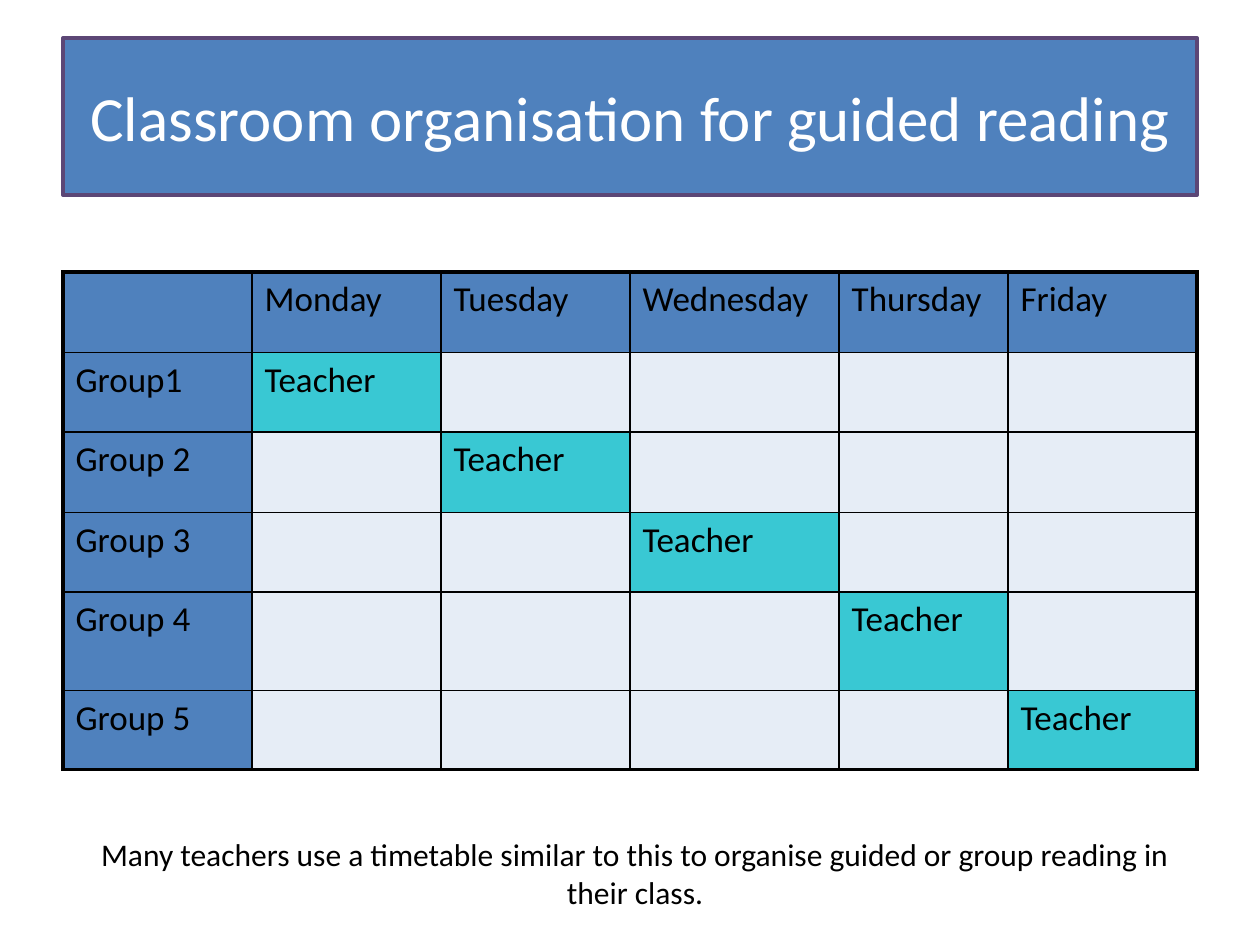
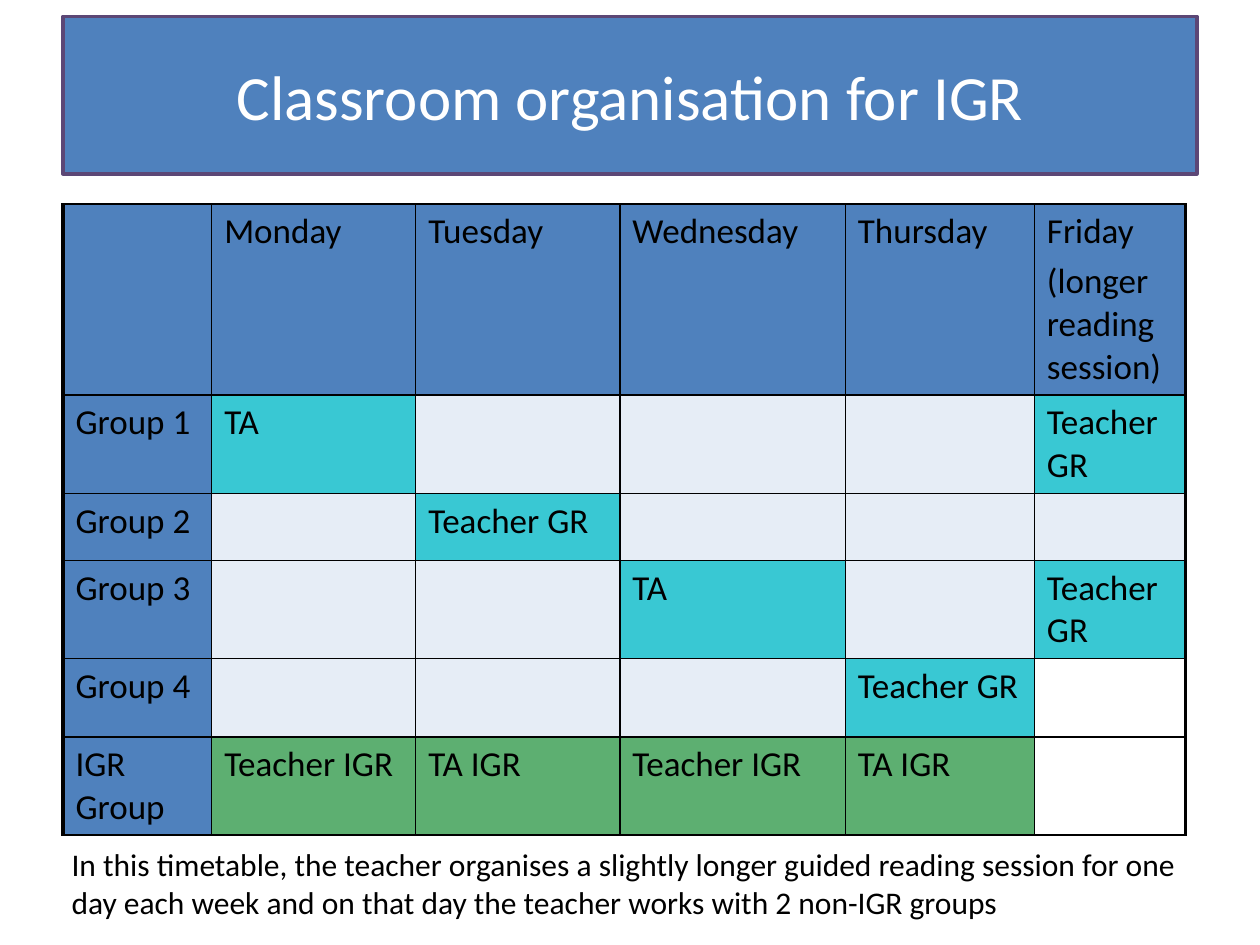
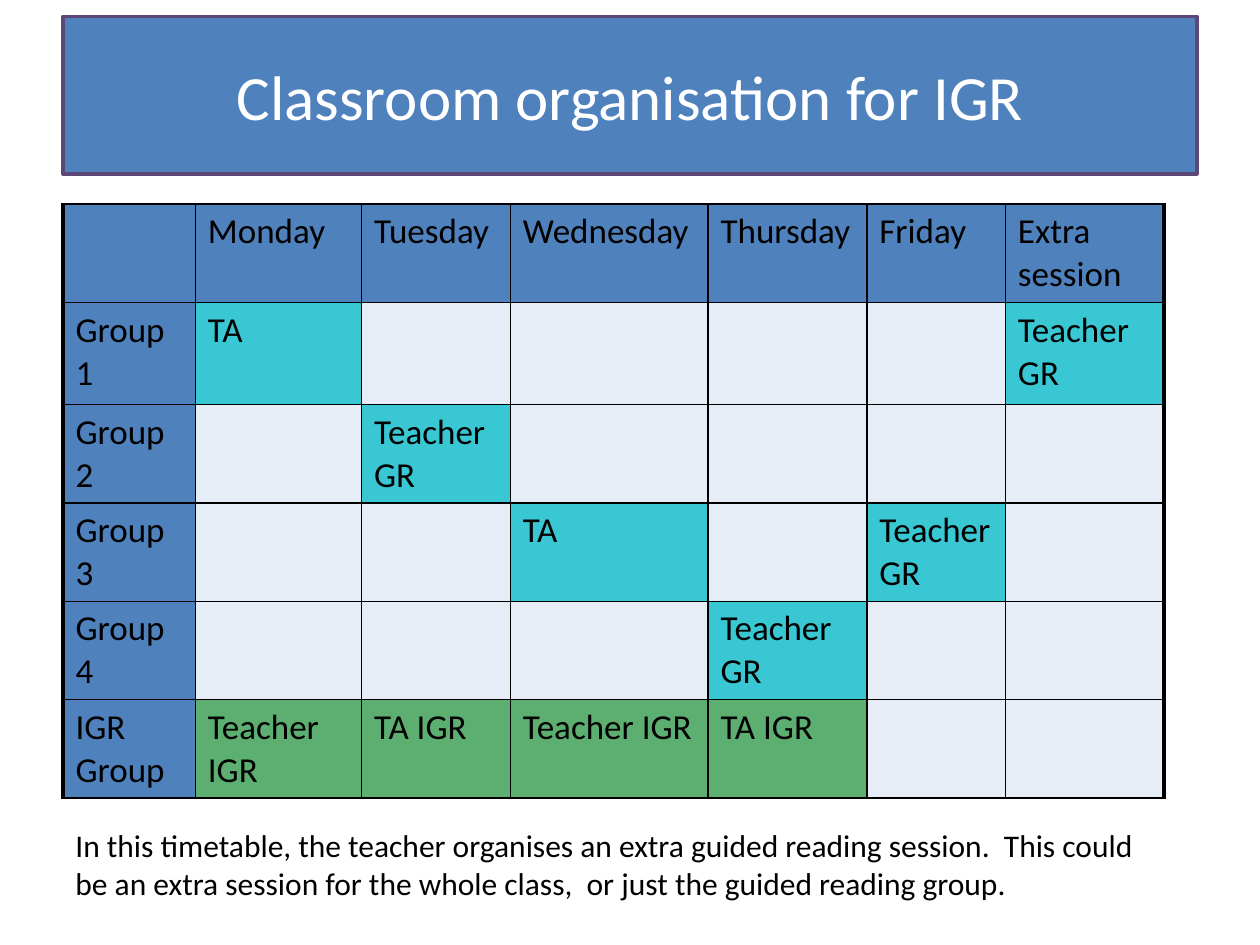
from lxml import etree
from pptx import Presentation
from pptx.dml.color import RGBColor
from pptx.enum import text as t
from pptx.oxml import ns
from pptx.util import Inches, Pt

HUES = {
    "head": "4F81BD", "edge": "5C4776", "plain": "E6EDF6", "guide": "39C8D3",
    "igr": "5DAF71", "white": "FFFFFF", "black": "000000",
}
FONT = "Calibri"
LEFT = 0.5
TALL = 0.77
IGR = ("IGR Group", {"Monday": "Teacher IGR", "Tuesday": "TA IGR",
                     "Wednesday": "Teacher IGR", "Thursday": "TA IGR"})

PLANS = [
    {
        "title": "Classroom organisation for guided reading", "top": 0.3,
        "days": [("Monday", 1.5), ("Tuesday", 1.5), ("Wednesday", 1.66),
                 ("Thursday", 1.34), ("Friday", 1.5)],
        "first": 1.5, "start": 2.16, "thick": "LRTB", "clear": [],
        "rows": [0.64, 0.63, 0.64, 0.63, 0.78, 0.63],
        "groups": [("Group1", {"Monday": "Teacher"}),
                   ("Group 2", {"Tuesday": "Teacher"}),
                   ("Group 3", {"Wednesday": "Teacher"}),
                   ("Group 4", {"Thursday": "Teacher"}),
                   ("Group 5", {"Friday": "Teacher"})],
        "note": "Many teachers use a timetable similar to this to organise "
                "guided or group reading in their class.",
        "box": (0.59, 6.58, 8.9, 0.71), "align": t.PP_ALIGN.CENTER,
    },
    {
        "title": "Classroom organisation for IGR", "top": 0.13,
        "days": [("Monday", 1.62), ("Tuesday", 1.62), ("Wednesday", 1.79),
                 ("Thursday", 1.5), ("Friday\n(longer reading session)", 1.2)],
        "first": 1.18, "start": 1.62, "thick": "LR",
        "clear": [("Group 4", "Friday"), ("IGR Group", "Friday")],
        "rows": [1.49, TALL, 0.53, TALL, 0.62, TALL],
        "groups": [("Group 1", {"Monday": "TA", "Friday": "Teacher GR"}),
                   ("Group 2", {"Tuesday": "Teacher GR"}),
                   ("Group 3", {"Wednesday": "TA", "Friday": "Teacher GR"}),
                   ("Group 4", {"Thursday": "Teacher GR"}),
                   IGR],
        "note": "In this timetable, the teacher organises a slightly longer guided "
                "reading session for one day each week and on that day the teacher "
                "works with 2 non-IGR groups",
        "box": (0.47, 6.66, 9, 0.71), "align": t.PP_ALIGN.LEFT,
    },
    {
        "title": "Classroom organisation for IGR", "top": 0.13,
        "days": [("Monday", 1.32), ("Tuesday", 1.18), ("Wednesday", 1.57),
                 ("Thursday", 1.26), ("Friday", 1.1), ("Extra session", 1.26)],
        "first": 1.05, "start": 1.62, "thick": "LR", "clear": [],
        "rows": [TALL, 0.81, TALL, TALL, TALL, TALL],
        "groups": [("Group 1", {"Monday": "TA", "Extra session": "Teacher GR"}),
                   ("Group 2", {"Tuesday": "Teacher GR"}),
                   ("Group 3", {"Wednesday": "TA", "Friday": "Teacher GR"}),
                   ("Group 4", {"Thursday": "Teacher GR"}),
                   IGR],
        "note": "In this timetable, the teacher organises an extra guided reading "
                "session.  This could be an extra session for the whole class,  "
                "or just the guided reading group.",
        "box": (0.5, 6.51, 8.75, 0.71), "align": t.PP_ALIGN.LEFT,
    },
]


def paint(fill, hue):
    fill.solid()
    fill.fore_color.rgb = RGBColor.from_string(HUES[hue])


def style(frame, size, hue, align=t.PP_ALIGN.LEFT, gap=0):
    for para in frame.paragraphs:
        para.alignment = align
        para.space_before = Pt(gap)
        para.font.size = Pt(size)
        for run in para.runs:
            run.font.size = Pt(size)
            run.font.name = FONT
            run.font.color.rgb = RGBColor.from_string(HUES[hue])


def add_title(slide, plan):
    band = slide.shapes.title
    band.left, band.top = Inches(LEFT), Inches(plan["top"])
    band.width, band.height = Inches(9), Inches(1.25)
    paint(band.fill, "head")
    paint(band.line.fill, "edge")
    band.line.width = Pt(2)
    frame = band.text_frame
    frame.text = plan["title"]
    frame.auto_size = t.MSO_AUTO_SIZE.NONE
    frame.vertical_anchor = t.MSO_ANCHOR.MIDDLE
    style(frame, 36, "white", t.PP_ALIGN.CENTER)


def add_edges(cell, outer):
    props = cell._tc.get_or_add_tcPr()
    for side in "LRTB":
        width = Pt(2.25 if side in outer else 1)
        line = etree.SubElement(props, ns.qn("a:ln" + side), w=str(width))
        fill = etree.SubElement(line, ns.qn("a:solidFill"))
        etree.SubElement(fill, ns.qn("a:srgbClr"), val=HUES["black"])


def pick_hue(plan, row, col, group, day, words):
    if row == 0 or col == 0:
        return "head"
    if words:
        return "igr" if words.endswith("IGR") else "guide"
    return "white" if (group, day) in plan["clear"] else "plain"


def add_plan(slide, plan):
    heads = [""] + [name for name, _ in plan["days"]]
    days = [name.split("\n")[0] for name in heads]
    wide = [plan["first"]] + [width for _, width in plan["days"]]
    grid = [heads] + [[group] + [duty.get(day, "") for day in days[1:]]
                      for group, duty in plan["groups"]]
    high = plan["rows"]
    table = slide.shapes.add_table(
        len(grid), len(heads), Inches(LEFT), Inches(plan["start"]),
        Inches(sum(wide)), Inches(sum(high))).table
    table.first_row = table.horz_banding = False
    for col, width in enumerate(wide):
        table.columns[col].width = Inches(width)
    for row, line in enumerate(grid):
        table.rows[row].height = Inches(high[row])
        for col, words in enumerate(line):
            cell = table.cell(row, col)
            cell.text = words
            style(cell.text_frame, 20, "black", gap=4)
            rim = {"L": col == 0, "R": col == len(heads) - 1,
                   "T": row == 0, "B": row == len(grid) - 1}
            add_edges(cell, [side for side in plan["thick"] if rim[side]])
            paint(cell.fill, pick_hue(plan, row, col, line[0], days[col], words))


def add_note(slide, plan):
    box = slide.shapes.add_textbox(*map(Inches, plan["box"]))
    frame = box.text_frame
    frame.word_wrap = True
    frame.auto_size = t.MSO_AUTO_SIZE.SHAPE_TO_FIT_TEXT
    frame.text = plan["note"]
    style(frame, 18, "black", plan["align"])


def main():
    deck = Presentation()
    deck.slide_width, deck.slide_height = Inches(10), Inches(7.5)
    for plan in PLANS:
        slide = deck.slides.add_slide(deck.slide_layouts[5])
        add_title(slide, plan)
        add_plan(slide, plan)
        add_note(slide, plan)
    deck.save("out.pptx")


if __name__ == "__main__":
    main()
